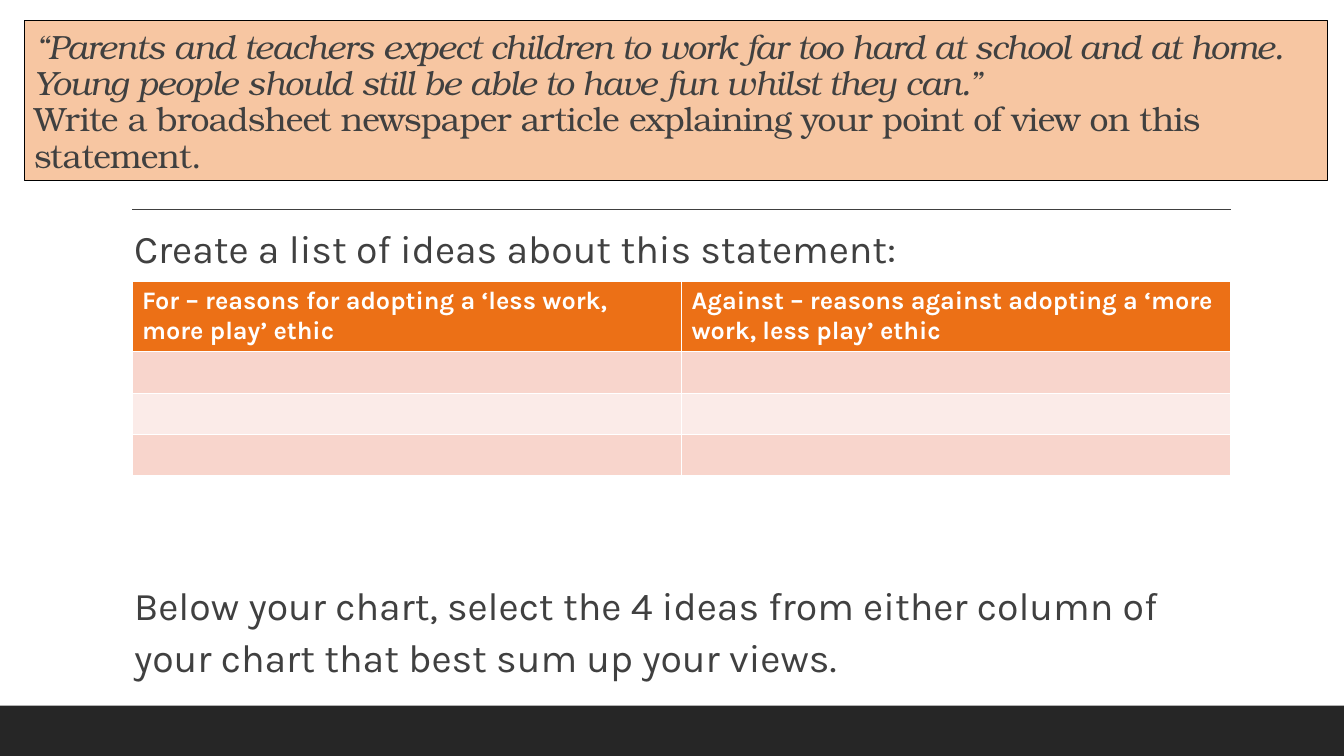
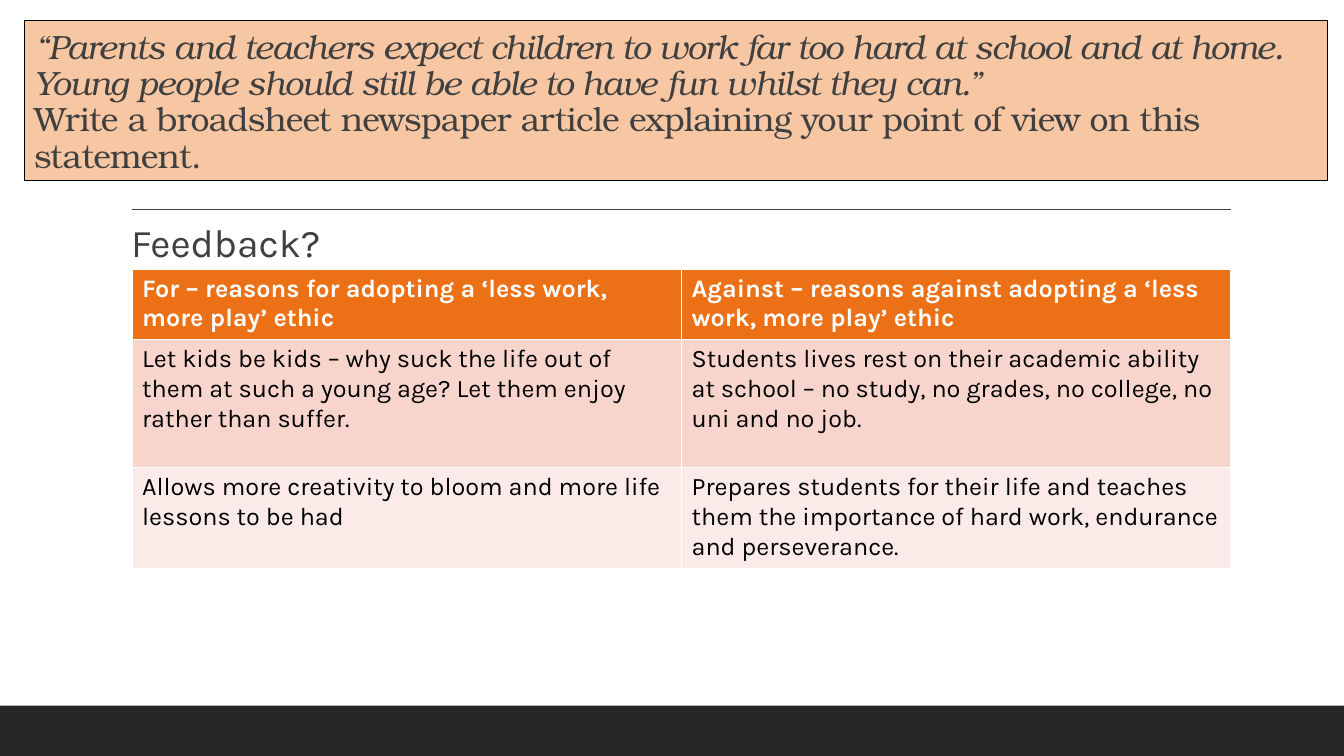
"""Build two slides that gather ideas for and against a broadsheet article statement."""
from dataclasses import dataclass

from lxml import etree
from pptx import Presentation
from pptx.dml.color import RGBColor
from pptx.enum import shapes, text
from pptx.oxml import ns
from pptx.presentation import Presentation as Deck
from pptx.slide import Slide
from pptx.util import Inches, Pt


@dataclass(frozen=True)
class Theme:
    ink: RGBColor = RGBColor.from_string("404040")
    black: RGBColor = RGBColor.from_string("000000")
    white: RGBColor = RGBColor.from_string("FFFFFF")
    footer: RGBColor = RGBColor.from_string("262626")
    peach: RGBColor = RGBColor.from_string("F7C6A2")
    header: RGBColor = RGBColor.from_string("EC7016")
    bands: tuple[RGBColor, RGBColor] = (
        RGBColor.from_string("F8D5CC"),
        RGBColor.from_string("FBEBE8"),
    )
    title_font: str = "TeX Gyre Bonum"
    body_font: str = "Karla"
    title_size: int = 24
    body_size: int = 28
    table_size: int = 18


@dataclass(frozen=True)
class Prompt:
    words: str
    left: float
    top: float
    height: float


@dataclass(frozen=True)
class IdeasTable:
    top: float
    row_heights: tuple[float, ...]
    rows: tuple[tuple[str, str], ...]


@dataclass(frozen=True)
class Page:
    prompts: tuple[Prompt, ...]
    table: IdeasTable


THEME = Theme()
WIDTH, HEIGHT = 13.33, 7.5
FOOTER_HEIGHT = 0.5
MARGIN = 1.31
CONTENT_WIDTH = 10.9
RULE_TOP = 2.08
QUOTE = (
    "“Parents and teachers expect children to work far too hard at school and at home. "
    "Young people should still be able to have fun whilst they can.”"
)
TASK = "Write a broadsheet newspaper article explaining your point of view on this statement."
FOR_HEADING = "For – reasons for adopting a ‘less work, more play’ ethic"

PAGES = (
    Page(
        prompts=(
            Prompt("Create a list of ideas about this statement:", 1.33, 2.13, 0.6),
            Prompt(
                "Below your chart, select the 4 ideas from either column of "
                "your chart that best sum up your views.",
                1.33, 5.67, 1.15,
            ),
        ),
        table=IdeasTable(
            top=2.79,
            row_heights=(0.69, 0.41, 0.41, 0.41),
            rows=(
                (FOR_HEADING, "Against – reasons against adopting a ‘more work, less play’ ethic"),
                ("", ""),
                ("", ""),
                ("", ""),
            ),
        ),
    ),
    Page(
        prompts=(Prompt("Feedback?", 1.3, 2.07, 0.6),),
        table=IdeasTable(
            top=2.67,
            row_heights=(0.69, 1.27, 0.98),
            rows=(
                (FOR_HEADING, "Against – reasons against adopting a ‘less work, more play’ ethic"),
                (
                    "Let kids be kids – why suck the life out of them at such a young age? "
                    "Let them enjoy rather than suffer.",
                    "Students lives rest on their academic ability at school – no study, "
                    "no grades, no college, no uni and no job.",
                ),
                (
                    "Allows more creativity to bloom and more life lessons to be had",
                    "Prepares students for their life and teaches them the importance of "
                    "hard work, endurance and perseverance.",
                ),
            ),
        ),
    ),
)


def style_paragraph(paragraph, font_name: str, size: int, color: RGBColor) -> None:
    """Set the shared font settings of a paragraph."""
    paragraph.font.name = font_name
    paragraph.font.size = Pt(size)
    paragraph.font.color.rgb = color


def draw_frame(slide: Slide) -> None:
    """Draw the footer band and the rule below the title."""
    band = slide.shapes.add_shape(
        shapes.MSO_SHAPE.RECTANGLE,
        Inches(0), Inches(HEIGHT - FOOTER_HEIGHT), Inches(WIDTH), Inches(FOOTER_HEIGHT),
    )
    band.shadow.inherit = False
    band.fill.solid()
    band.fill.fore_color.rgb = THEME.footer
    band.line.fill.background()

    rule = slide.shapes.add_connector(
        shapes.MSO_CONNECTOR.STRAIGHT,
        Inches(MARGIN), Inches(RULE_TOP), Inches(MARGIN + CONTENT_WIDTH), Inches(RULE_TOP),
    )
    rule.line.color.rgb = THEME.ink
    rule.line.width = Pt(1)
    etree.SubElement(rule._element.spPr, ns.qn("a:effectLst"))


def draw_title(slide: Slide) -> None:
    """Draw the peach box with the quotation and the writing task."""
    box = slide.shapes.add_shape(
        shapes.MSO_SHAPE.RECTANGLE, Inches(0.24), Inches(0.2), Inches(12.93), Inches(1.59)
    )
    box.shadow.inherit = False
    box.fill.solid()
    box.fill.fore_color.rgb = THEME.peach
    box.line.color.rgb = THEME.black
    box.line.width = Pt(0.75)
    frame = box.text_frame
    frame.word_wrap = True
    frame.vertical_anchor = text.MSO_ANCHOR.BOTTOM
    frame.text = f"{QUOTE}\n{TASK}"
    for paragraph, italic in zip(frame.paragraphs, (True, False)):
        style_paragraph(paragraph, THEME.title_font, THEME.title_size, THEME.ink)
        paragraph.font.italic = italic
        paragraph.alignment = text.PP_ALIGN.LEFT
        paragraph.line_spacing = 0.9
        for run in paragraph.runs:
            run._r.get_or_add_rPr().set("spc", "-50")


def draw_prompt(slide: Slide, prompt: Prompt) -> None:
    """Draw one instruction line around the table."""
    box = slide.shapes.add_textbox(
        Inches(prompt.left), Inches(prompt.top), Inches(CONTENT_WIDTH), Inches(prompt.height)
    )
    frame = box.text_frame
    frame.word_wrap = True
    frame.margin_left = frame.margin_right = Inches(0)
    frame.text = prompt.words
    paragraph = frame.paragraphs[0]
    style_paragraph(paragraph, THEME.body_font, THEME.body_size, THEME.ink)
    paragraph.line_spacing = 1.1


def draw_table(slide: Slide, ideas: IdeasTable) -> None:
    """Draw the two-column table of reasons."""
    table = slide.shapes.add_table(
        len(ideas.rows), 2,
        Inches(MARGIN), Inches(ideas.top), Inches(CONTENT_WIDTH), Inches(sum(ideas.row_heights)),
    ).table
    for row_index, (height, words) in enumerate(zip(ideas.row_heights, ideas.rows)):
        is_header = row_index == 0
        table.rows[row_index].height = Inches(height)
        for cell, sentence in zip(table.rows[row_index].cells, words):
            cell.fill.solid()
            cell.fill.fore_color.rgb = THEME.header if is_header else THEME.bands[(row_index - 1) % 2]
            cell.text = sentence
            paragraph = cell.text_frame.paragraphs[0]
            color = THEME.white if is_header else THEME.black
            style_paragraph(paragraph, THEME.body_font, THEME.table_size, color)
            paragraph.font.bold = is_header


def draw_page(presentation: Deck, page: Page) -> None:
    """Add one slide with its frame, title, prompts and table."""
    slide = presentation.slides.add_slide(presentation.slide_layouts[6])
    draw_frame(slide)
    draw_title(slide)
    for prompt in page.prompts:
        draw_prompt(slide, prompt)
    draw_table(slide, page.table)


def main() -> None:
    """Build and save the presentation."""
    presentation = Presentation()
    presentation.slide_width = Inches(WIDTH)
    presentation.slide_height = Inches(HEIGHT)
    for page in PAGES:
        draw_page(presentation, page)
    presentation.save("out.pptx")


if __name__ == "__main__":
    main()
